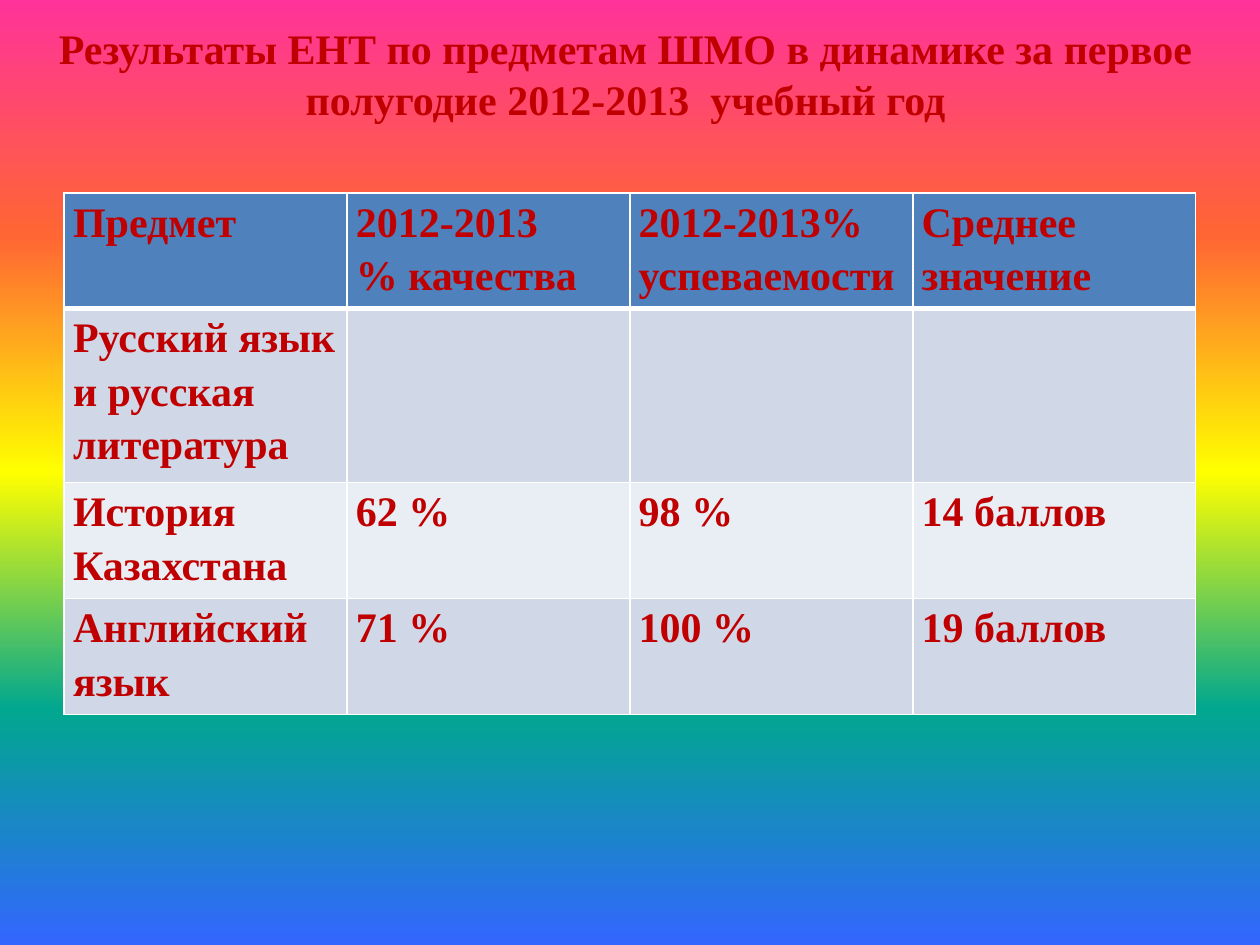
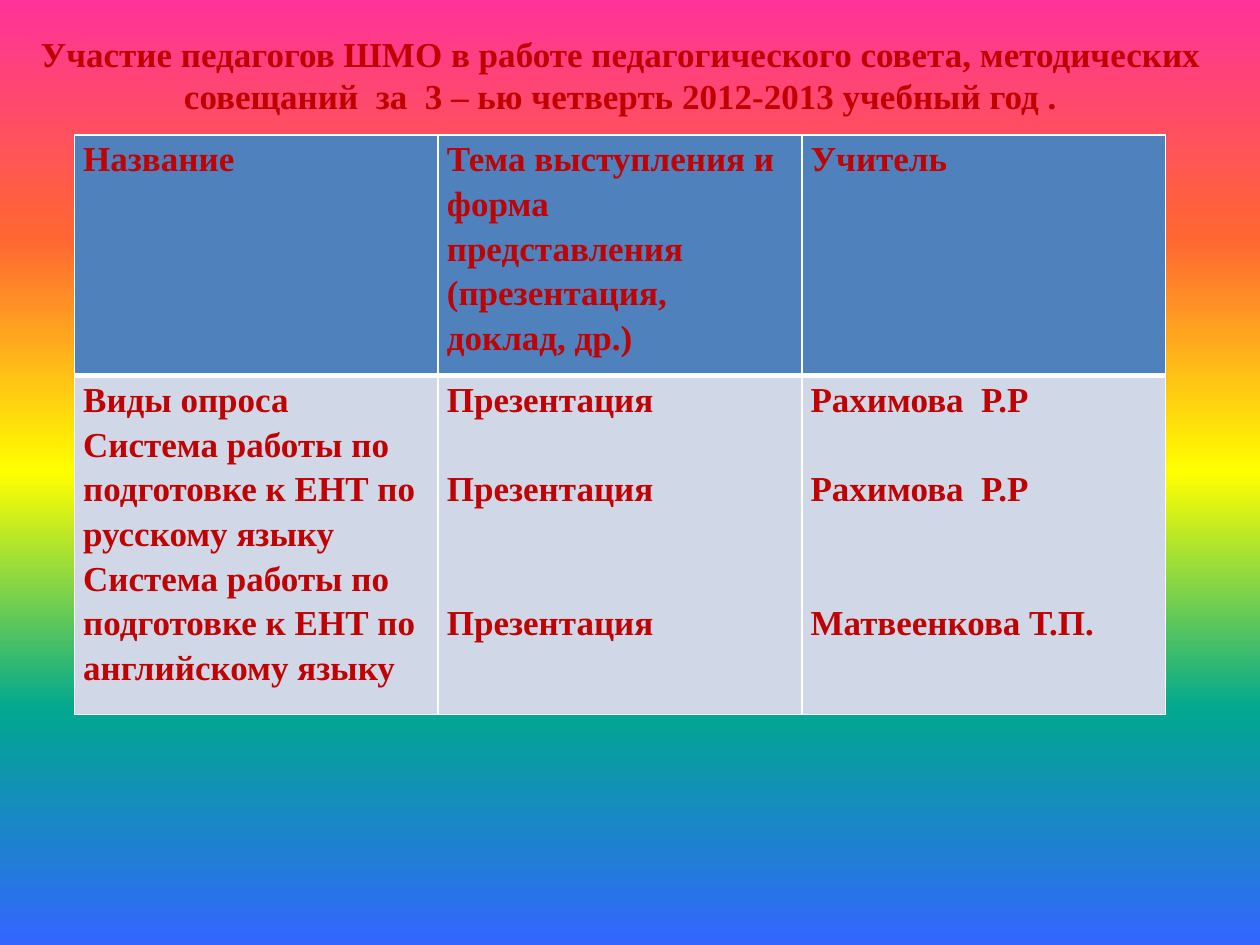
import dataclasses

import lxml.etree
import pptx
import pptx.dml.color
import pptx.enum.text
import pptx.oxml.ns
import pptx.util


@dataclasses.dataclass(frozen=True)
class Theme:
    font: str = "Times New Roman"
    text: str = "C00000"
    border: str = "FFFFFF"
    header: str = "4F81BD"
    bands: tuple = ("D0D8E8", "E9EDF4")
    rainbow: tuple = ("FF3399", "FF6633", "FFFF00", "01A78F", "3366FF")
    large: int = 24
    medium: int = 20
    table_spacing: float = 1.15
    line_height: float = 25.5
    thin: float = 1
    thick: float = 3


THEME = Theme()
TITLE_ONLY_LAYOUT = 5

RESULTS = [
    [["Предмет"], ["2012-2013", "% качества"], ["2012-2013% успеваемости"], ["Среднее значение"]],
    [["Русский язык", "и русская литература"], [], [], []],
    [["История Казахстана"], ["62 %"], ["98 %"], ["14 баллов"]],
    [["Английский язык"], ["71 %"], ["100 %"], ["19 баллов"]],
]

PARTICIPATION = [
    [["Название"], ["Тема выступления и форма представления (презентация, доклад, др.)"], ["Учитель"]],
    [
        [
            "Виды опроса",
            "Система работы по подготовке к ЕНТ по русскому языку",
            "Система работы по подготовке к ЕНТ по английскому языку",
        ],
        ["Презентация", "Презентация", "Презентация"],
        ["Рахимова  Р.Р", "Рахимова  Р.Р", "Матвеенкова Т.П."],
    ],
]
TOPIC_GAPS = (0, 1, 2)


def color(value):
    return pptx.dml.color.RGBColor.from_string(value)


def write_text(text_frame, paragraphs, size, alignment=None, line_spacing=1.0, gaps=()):
    text_frame.word_wrap = True
    for index, text in enumerate(paragraphs):
        paragraph = text_frame.paragraphs[0] if index == 0 else text_frame.add_paragraph()
        paragraph.alignment = alignment
        paragraph.line_spacing = line_spacing
        if gaps:
            paragraph.space_before = pptx.util.Pt(gaps[index] * THEME.line_height)
        run = paragraph.add_run()
        run.text = text
        run.font.name = THEME.font
        run.font.size = pptx.util.Pt(size)
        run.font.bold = True
        run.font.color.rgb = color(THEME.text)


def paint_background(master):
    fill = master.background.fill
    fill.gradient()
    fill.gradient_angle = 270
    qn = pptx.oxml.ns.qn
    stops = master.element.find(".//" + qn("p:bg")).find(".//" + qn("a:gsLst"))
    for stop in list(stops):
        stops.remove(stop)
    step = 100000 // (len(THEME.rainbow) - 1)
    for index, value in enumerate(THEME.rainbow):
        stop = lxml.etree.SubElement(stops, qn("a:gs"), pos=str(index * step))
        lxml.etree.SubElement(stop, qn("a:srgbClr"), val=value)


def set_borders(cell, top, bottom):
    qn = pptx.oxml.ns.qn
    properties = cell._tc.get_or_add_tcPr()
    sides = (("a:lnL", THEME.thin), ("a:lnR", THEME.thin), ("a:lnT", top), ("a:lnB", bottom))
    for index, (side, width) in enumerate(sides):
        line = lxml.etree.Element(qn(side), w=str(pptx.util.Pt(width)))
        solid = lxml.etree.SubElement(line, qn("a:solidFill"))
        lxml.etree.SubElement(solid, qn("a:srgbClr"), val=THEME.border)
        properties.insert(index, line)


def add_title(slide, box, text, size):
    title = slide.shapes.title
    title.left, title.top, title.width, title.height = map(pptx.util.Inches, box)
    title.text_frame.auto_size = pptx.enum.text.MSO_AUTO_SIZE.NONE
    title.text_frame.vertical_anchor = pptx.enum.text.MSO_ANCHOR.TOP
    write_text(title.text_frame, [text], size, alignment=pptx.enum.text.PP_ALIGN.CENTER)


def add_grid(slide, box, rows, row_heights, size, gaps=()):
    column_count = len(rows[0])
    frame = slide.shapes.add_table(len(rows), column_count, *map(pptx.util.Inches, box))
    table = frame.table
    for column in table.columns:
        column.width = pptx.util.Inches(box[2] / column_count)
    for row_index, (contents, height) in enumerate(zip(rows, row_heights)):
        table.rows[row_index].height = pptx.util.Inches(height)
        fill = THEME.bands[(row_index - 1) % 2] if row_index else THEME.header
        top = THEME.thick if row_index == 1 else THEME.thin
        bottom = THEME.thick if row_index == 0 else THEME.thin
        for column_index, paragraphs in enumerate(contents):
            cell = table.cell(row_index, column_index)
            cell.margin_left = cell.margin_right = pptx.util.Inches(0.07)
            cell.margin_top = cell.margin_bottom = 0
            cell.fill.solid()
            cell.fill.fore_color.rgb = color(fill)
            set_borders(cell, top, bottom)
            cell_gaps = gaps if row_index and column_index else ()
            write_text(cell.text_frame, paragraphs, size,
                       line_spacing=THEME.table_spacing, gaps=cell_gaps)


def add_table_slide(presentation, title, title_box, table_box, rows, row_heights, size, gaps=()):
    slide = presentation.slides.add_slide(presentation.slide_layouts[TITLE_ONLY_LAYOUT])
    add_title(slide, title_box, title, size)
    add_grid(slide, table_box, rows, row_heights, size, gaps)


def main():
    presentation = pptx.Presentation()
    presentation.slide_width = pptx.util.Inches(10)
    presentation.slide_height = pptx.util.Inches(7.5)
    paint_background(presentation.slide_master)
    add_table_slide(
        presentation,
        "Результаты ЕНТ по предметам ШМО в динамике за первое полугодие 2012-2013  учебный год",
        (0.28, 0.13, 9.37, 0.91), (0.51, 1.53, 8.98, 4.14),
        RESULTS, (0.92, 1.38, 0.92, 0.92), THEME.large,
    )
    add_table_slide(
        presentation,
        "Участие педагогов ШМО в работе педагогического совета, методических совещаний"
        "  за  3 – ью четверть 2012-2013 учебный год .",
        (0.12, 0.21, 9.61, 0.77), (0.59, 1.07, 8.66, 4.6),
        PARTICIPATION, (1.91, 2.69), THEME.medium, TOPIC_GAPS,
    )
    presentation.save("out.pptx")


if __name__ == "__main__":
    main()
